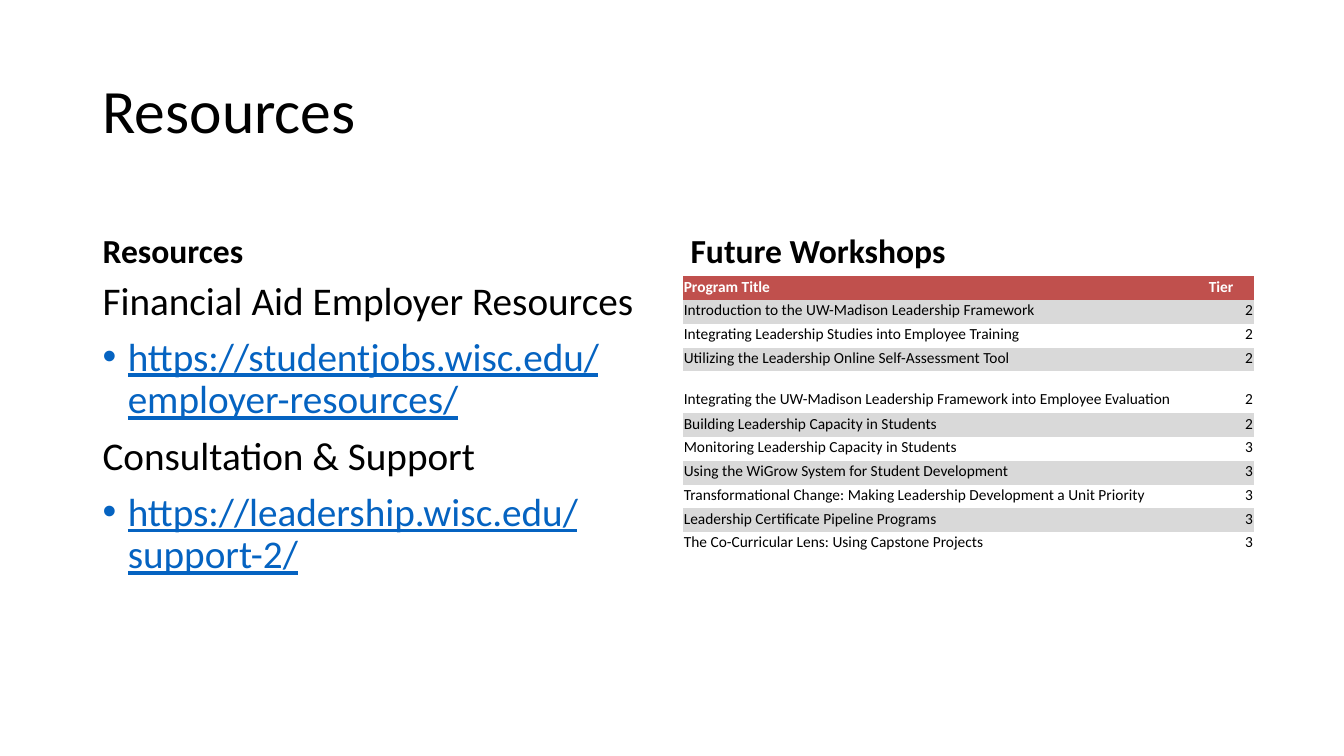
import dataclasses

import pptx
import pptx.dml.color
import pptx.enum.text
import pptx.oxml
import pptx.oxml.ns
import pptx.util

Pt = pptx.util.Pt
Anchor = pptx.enum.text.MSO_ANCHOR
Align = pptx.enum.text.PP_ALIGN


@dataclasses.dataclass(frozen=True)
class Theme:
    font: str = "Calibri"
    text: str = "000000"
    link: str = "0563C1"
    header_fill: str = "C0504D"
    header_text: str = "FFFFFF"
    band_fill: str = "D9D9D9"
    title_size: int = 44
    list_size: int = 28
    heading_size: int = 24
    table_size: int = 11


@dataclasses.dataclass(frozen=True)
class Box:
    left: float
    top: float
    width: float
    height: float

    def lengths(self):
        return [Pt(length) for length in dataclasses.astuple(self)]


THEME = Theme()
NO_GRID_STYLE = "{2D5ABB26-0587-4C30-8999-92F81FD0307C}"

# (text, is a link)
RESOURCES = [
    ("Financial Aid Employer Resources", False),
    ("https://studentjobs.wisc.edu/employer-resources/", True),
    ("Consultation & Support", False),
    ("https://leadership.wisc.edu/support-2/", True),
]

# (program title, tier, row height)
WORKSHOPS = [
    ("Program Title", "Tier", 17),
    ("Introduction to the UW-Madison Leadership Framework", "2", 17),
    ("Integrating Leadership Studies into Employee Training", "2", 17),
    ("Utilizing the Leadership Online Self-Assessment Tool", "2", 17),
    ("Integrating the UW-Madison Leadership Framework into Employee Evaluation", "2", 30),
    ("Building Leadership Capacity in Students", "2", 17),
    ("Monitoring Leadership Capacity in Students", "3", 17),
    ("Using the WiGrow System for Student Development", "3", 17),
    ("Transformational Change: Making Leadership Development a Unit Priority", "3", 17),
    ("Leadership Certificate Pipeline Programs", "3", 17),
    ("The Co-Curricular Lens: Using Capstone Projects", "3", 17),
]


def set_font(font, size, color, bold=False):
    font.name = THEME.font
    font.size = Pt(size)
    font.bold = bold
    font.color.rgb = pptx.dml.color.RGBColor.from_string(color)


def add_frame(page, box, anchor):
    frame = page.shapes.add_textbox(*box.lengths()).text_frame
    frame.word_wrap = True
    frame.vertical_anchor = anchor
    return frame


def add_line(page, box, text, size, anchor, bold=False):
    """A single line of text: the title or a column heading."""
    para = add_frame(page, box, anchor).paragraphs[0]
    para.text = text
    para.line_spacing = 0.9
    set_font(para.font, size, THEME.text, bold)


def add_bullet(para, indent):
    properties = para._p.get_or_add_pPr()
    properties.set("marL", str(Pt(indent)))
    properties.set("indent", str(-Pt(indent)))
    namespace = pptx.oxml.ns.nsdecls("a")
    for markup in (f'<a:buFont {namespace} typeface="Arial"/>',
                   f'<a:buChar {namespace} char="•"/>'):
        properties.append(pptx.oxml.parse_xml(markup))


def add_resource_list(page, box):
    frame = add_frame(page, box, Anchor.TOP)
    for index, (text, is_link) in enumerate(RESOURCES):
        para = frame.add_paragraph() if index else frame.paragraphs[0]
        para.text = text
        para.line_spacing = 0.9
        if index:
            para.space_before = Pt(10)
        if is_link:
            add_bullet(para, 18)
        set_font(para.font, THEME.list_size, THEME.link if is_link else THEME.text)
        para.font.underline = is_link


def fill_cell(cell, text, fill, color, bold, align):
    cell.margin_left = cell.margin_top = cell.margin_right = Pt(0.75)
    cell.margin_bottom = Pt(3)
    cell.vertical_anchor = Anchor.BOTTOM
    if fill:
        cell.fill.solid()
        cell.fill.fore_color.rgb = pptx.dml.color.RGBColor.from_string(fill)
    else:
        cell.fill.background()
    para = cell.text_frame.paragraphs[0]
    para.text = text
    para.alignment = align
    set_font(para.font, THEME.table_size, color, bold)


def add_workshop_table(page, box):
    table = page.shapes.add_table(len(WORKSHOPS), 2, *box.lengths()).table
    table.horz_banding = False
    table._tbl.tblPr.find(pptx.oxml.ns.qn("a:tableStyleId")).text = NO_GRID_STYLE
    tier_width = 33
    table.columns[0].width = Pt(box.width - tier_width)
    table.columns[1].width = Pt(tier_width)

    for index, (program, tier, height) in enumerate(WORKSHOPS):
        table.rows[index].height = Pt(height)
        is_header = index == 0
        if is_header:
            fill, color = THEME.header_fill, THEME.header_text
        else:
            fill, color = THEME.band_fill if index % 2 else None, THEME.text
        tier_align = Align.LEFT if is_header else Align.RIGHT
        fill_cell(table.cell(index, 0), program, fill, color, is_header, Align.LEFT)
        fill_cell(table.cell(index, 1), tier, fill, color, is_header, tier_align)


def add_resources_page(page, box):
    # Title
    add_line(page, Box(box.left, box.top, box.width, 104.4), "Resources",
             THEME.title_size, Anchor.MIDDLE)

    # Column headings
    heading_top, heading_height = box.top + 103.7, 64.8
    body_top = heading_top + heading_height
    column_width = 406
    right = box.left + box.width - 408
    for left, heading in ((box.left, "Resources"), (right, "Future Workshops")):
        add_line(page, Box(left, heading_top, column_width, heading_height), heading,
                 THEME.heading_size, Anchor.BOTTOM, bold=True)

    # Column bodies
    add_resource_list(page, Box(box.left, body_top, column_width, 290))
    table_height = sum(height for _, _, height in WORKSHOPS)
    add_workshop_table(page, Box(right + 1.5, body_top, 408, table_height))


def main():
    deck = pptx.Presentation()
    deck.slide_width = Pt(960)
    deck.slide_height = Pt(540)
    page = deck.slides.add_slide(deck.slide_layouts[6])
    add_resources_page(page, Box(66.2, 28.8, 828, 460))
    deck.save("out.pptx")


if __name__ == "__main__":
    main()
